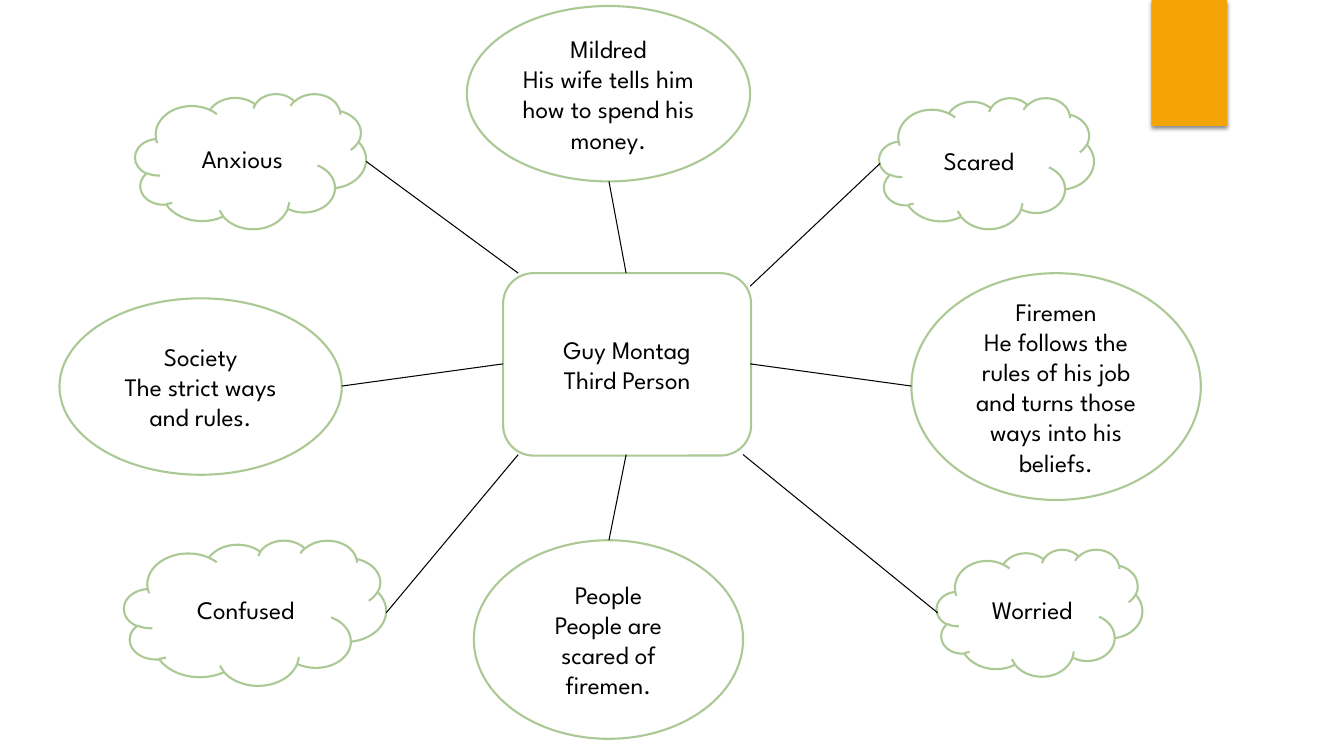
from lxml import etree
from pptx import Presentation
from pptx.dml.color import RGBColor
from pptx.enum.shapes import MSO_CONNECTOR, MSO_SHAPE
from pptx.enum.text import MSO_ANCHOR, PP_ALIGN
from pptx.oxml import parse_xml
from pptx.oxml.ns import nsdecls, qn
from pptx.util import Inches, Pt

OVAL, CLOUD = MSO_SHAPE.OVAL, MSO_SHAPE.CLOUD
HUB = MSO_SHAPE.FLOWCHART_ALTERNATE_PROCESS
RECTANGLE = MSO_SHAPE.RECTANGLE
STRAIGHT = MSO_CONNECTOR.STRAIGHT
CENTER, MIDDLE = PP_ALIGN.CENTER, MSO_ANCHOR.MIDDLE

COLORS = {"paper": "FFFFFF", "outline": "ACC995", "ink": "000000", "tab": "F5A408"}
FONT = "League Spartan"


def color(name):
    return RGBColor.from_string(COLORS[name])


def add_bubble(text, kind, place, fill="paper", outline="outline", size=18):
    box = page.shapes.add_shape(kind, *map(Inches, place))
    box.shadow.inherit = False
    box.fill.solid()
    box.fill.fore_color.rgb = color(fill)
    box.line.color.rgb = color(outline)
    box.line.width = Pt(1.5)
    frame = box.text_frame
    frame.word_wrap = True
    frame.vertical_anchor = MIDDLE
    frame.text = text
    for para in frame.paragraphs:
        para.alignment = CENTER
        for span in para.runs:
            span.font.name = FONT
            span.font.size = Pt(size)
            span.font.color.rgb = color("ink")


deck = Presentation()
deck.slide_width, deck.slide_height = Inches(13.33), Inches(7.5)
page = deck.slides.add_slide(deck.slide_layouts[6])
page.background.fill.solid()
page.background.fill.fore_color.rgb = color("paper")

# Orange tab with a soft shadow below it
tab = page.shapes.add_shape(RECTANGLE, Inches(11.42), 0, Inches(0.75), Inches(1.25))
tab.fill.solid()
tab.fill.fore_color.rgb = color("tab")
tab.line.fill.background()
tab.shadow.inherit = False
tab_effects = tab.element.spPr.find(qn("a:effectLst"))
tab_effects.append(parse_xml(
    f'<a:outerShdw {nsdecls("a")} blurRad="{Pt(3)}" dist="{Pt(2)}" dir="5400000" rotWithShape="0">'
    f'<a:srgbClr val="{COLORS["ink"]}"><a:alpha val="45000"/></a:srgbClr></a:outerShdw>'))

# Influences in ovals, feelings in clouds, the character in the middle
bubbles = [
    ("Society\nThe strict ways and rules.", OVAL, (0.59, 2.96, 2.8, 1.75)),
    ("Mildred\nHis wife tells him how to spend his money.", OVAL, (4.63, 0.06, 2.81, 1.74)),
    ("Firemen\nHe follows the rules of his job and turns those ways into his beliefs.",
     OVAL, (9.04, 2.71, 2.87, 2.25)),
    ("People\nPeople are scared of firemen.", OVAL, (4.7, 5.36, 2.67, 1.97)),
    ("Anxious", CLOUD, (1.34, 0.93, 2.29, 1.34)),
    ("Confused", CLOUD, (1.23, 5.36, 2.6, 1.44)),
    ("Scared", CLOUD, (8.72, 0.97, 2.13, 1.3)),
    ("Worried", CLOUD, (9.29, 5.45, 2.04, 1.26)),
    ("Guy Montag\nThird Person", HUB, (4.99, 2.71, 2.46, 1.81)),
]
for text, kind, place in bubbles:
    add_bubble(text, kind, place)

# Spokes from each bubble to the character
spokes = [
    (6.04, 1.8, 6.21, 2.71),
    (3.63, 1.6, 5.14, 2.71),
    (3.39, 3.83, 4.99, 3.61),
    (3.83, 6.08, 5.14, 4.51),
    (6.04, 5.36, 6.21, 4.51),
    (8.73, 1.62, 7.44, 2.84),
    (9.04, 3.83, 7.44, 3.61),
    (9.3, 6.08, 7.37, 4.51),
]
for ends in spokes:
    spoke = page.shapes.add_connector(STRAIGHT, *map(Inches, ends))
    spoke.line.color.rgb = color("ink")
    spoke.line.width = Pt(0.75)
    etree.SubElement(spoke.element.spPr, qn("a:effectLst"))

deck.save("out.pptx")
